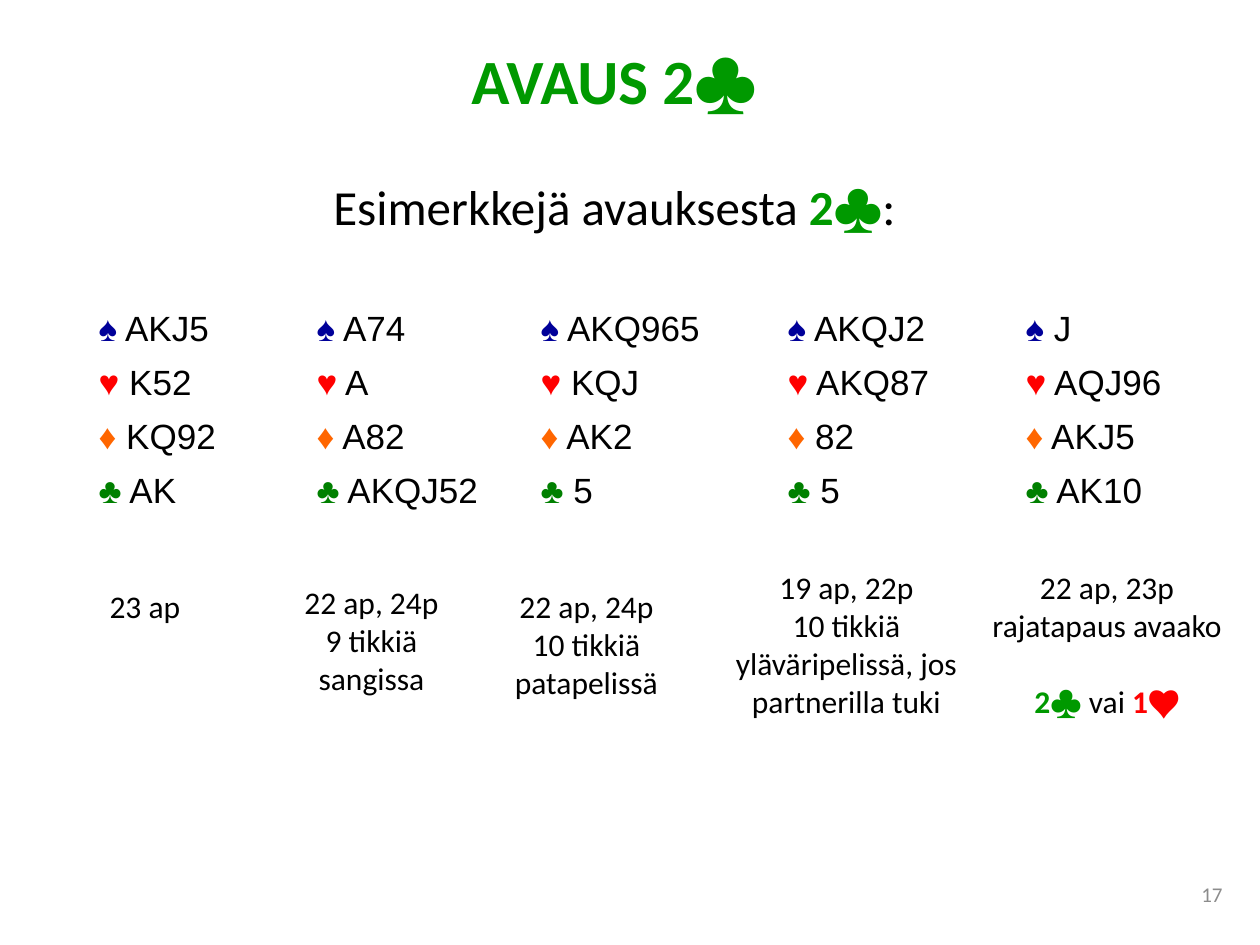
from pptx import Presentation
from pptx.dml.color import RGBColor
from pptx.enum.text import MSO_ANCHOR, MSO_AUTO_SIZE, PP_ALIGN
from pptx.util import Emu, Pt

SCALE = 914400 // 126
COLORS = {
    "black": "000000", "green": "009900", "spade": "000099",
    "heart": "FF0000", "diamond": "FF6600", "club": "008000", "gray": "8C8C8C",
}
COLUMN_WIDTHS = (218, 224, 247, 238, 198)
ROW_HEIGHT = 54
SUITS = (
    ("♠", "spade", ("AKJ5", "A74", "AKQ965", "AKQJ2", "J")),
    ("♥", "heart", ("K52", "A", "KQJ", "AKQ87", "AQJ96")),
    ("♦", "diamond", ("KQ92", "A82", "AK2", "82", "AKJ5")),
    ("♣", "club", ("AK", "AKQJ52", "5", "5", "AK10")),
)
NOTES = (
    ((84, 581, 129, 50), ("23 ap ",)),
    ((282, 577, 179, 127), ("22 ap, 24p", "9 tikkiä sangissa")),
    ((483, 581, 207, 127), ("22 ap, 24p", "10 tikkiä patapelissä")),
    ((709, 562, 275, 165),
     ("19 ap, 22p", "10 tikkiä yläväripelissä, jos partnerilla tuki")),
)


def pixels(value):
    return Emu(value * SCALE)


def place(shape, bounds):
    for name, value in zip(("left", "top", "width", "height"), bounds):
        setattr(shape, name, pixels(value))


def write_paragraph(para, spans, size, font="Calibri", **formats):
    for name, value in formats.items():
        setattr(para, name, value)
    for text, color, bold in spans:
        span = para.add_run()
        span.text = text
        values = {"name": font, "size": Pt(size), "bold": bold}
        for name, value in values.items():
            setattr(span.font, name, value)
        span.font.color.rgb = RGBColor.from_string(COLORS[color])


def format_frame(frame, anchor=MSO_ANCHOR.TOP):
    values = {
        "word_wrap": True, "auto_size": MSO_AUTO_SIZE.NONE,
        "vertical_anchor": anchor,
    }
    for name, value in values.items():
        setattr(frame, name, value)


def add_text(page, bounds, lines, size, alignment=PP_ALIGN.CENTER,
             anchor=MSO_ANCHOR.TOP):
    box = page.shapes.add_textbox(*map(pixels, bounds))
    frame = box.text_frame
    format_frame(frame, anchor)
    for index, spans in enumerate(lines):
        para = frame.add_paragraph() if index else frame.paragraphs[0]
        write_paragraph(para, spans, size, alignment=alignment)
    return box


def add_title(page):
    title = page.shapes.title
    place(title, (282, 35, 665, 90))
    format_frame(title.text_frame)
    write_paragraph(title.text_frame.paragraphs[0],
                    [("AVAUS 2♣", "green", True)], 36,
                    alignment=PP_ALIGN.CENTER)


def add_hands(page):
    bounds = (86, 304, sum(COLUMN_WIDTHS), ROW_HEIGHT * len(SUITS))
    table = page.shapes.add_table(
        len(SUITS), len(COLUMN_WIDTHS), *map(pixels, bounds)).table
    table.first_row = False
    table.horz_banding = False
    for column, width in zip(table.columns, COLUMN_WIDTHS):
        column.width = pixels(width)
    for row_index, (symbol, color, holdings) in enumerate(SUITS):
        table.rows[row_index].height = pixels(ROW_HEIGHT)
        for column_index, holding in enumerate(holdings):
            cell = table.cell(row_index, column_index)
            cell.fill.background()
            spans = [(symbol, color, False), (" " + holding, "black", False)]
            write_paragraph(cell.text_frame.paragraphs[0], spans, 20, "Arial",
                            alignment=PP_ALIGN.JUSTIFY)


def add_notes(page):
    for bounds, lines in NOTES:
        add_text(page, bounds, [[(line, "black", False)] for line in lines], 18)
    choice = add_text(page, (978, 562, 258, 165), [
        [("22 ap, 23p", "black", False)],
        [("rajatapaus avaako", "black", False)],
        [("2", "green", True), ("♣ ", "green", False), ("vai ", "black", False),
         ("1", "heart", True), ("♥", "heart", False)],
    ], 18)
    choice.text_frame.paragraphs[-1].space_before = Pt(22)


def main():
    deck = Presentation()
    deck.slide_width, deck.slide_height = pixels(1260), pixels(945)
    page = deck.slides.add_slide(deck.slide_layouts.get_by_name("Title Only"))
    add_title(page)
    add_hands(page)
    add_notes(page)
    add_text(page, (941, 869, 294, 50), [[("17", "gray", False)]], 12,
             PP_ALIGN.RIGHT, MSO_ANCHOR.MIDDLE)
    add_text(page, (287, 170, 655, 72), [
        [("Esimerkkejä avauksesta ", "black", False), ("2♣", "green", True),
         (":", "black", False)],
    ], 28)
    deck.save("out.pptx")


main()
